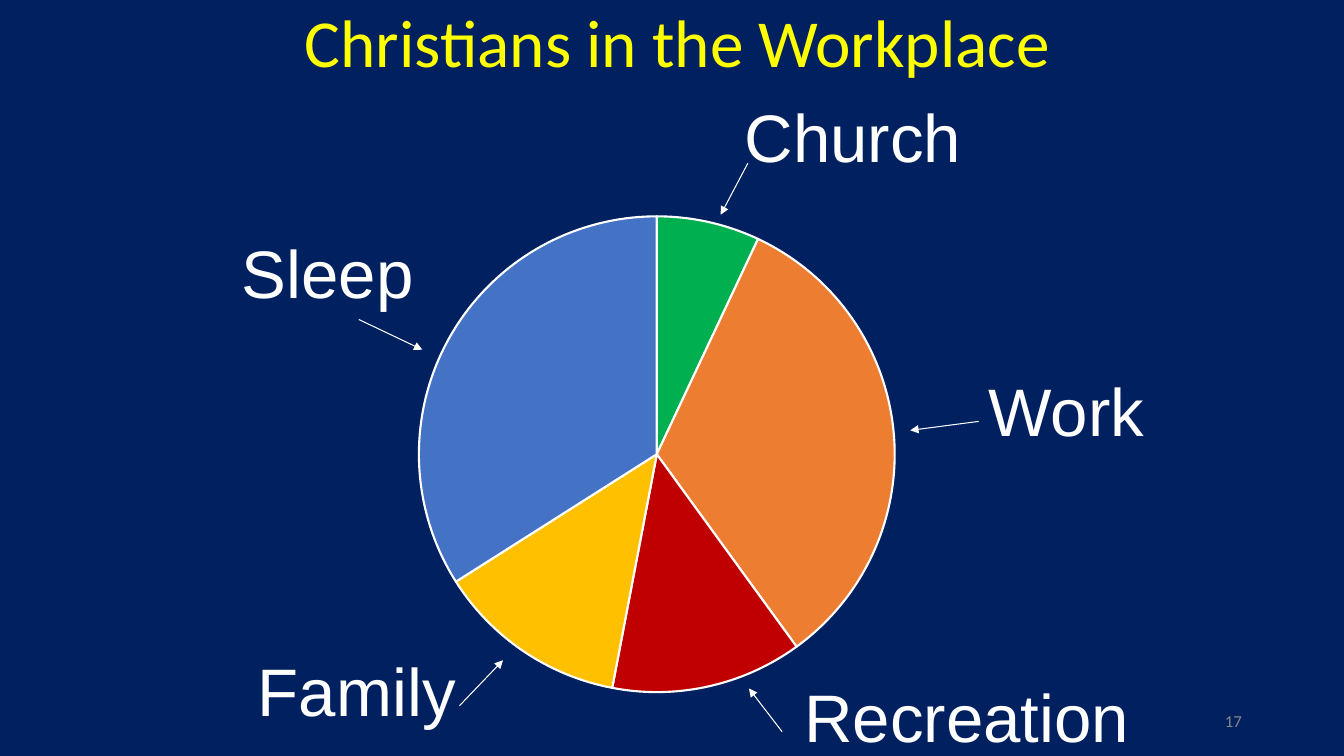
from lxml import etree
from pptx import Presentation
from pptx.chart.data import CategoryChartData
from pptx.dml.color import RGBColor
from pptx.enum.chart import XL_CHART_TYPE
from pptx.enum.shapes import MSO_CONNECTOR
from pptx.enum.text import MSO_ANCHOR, PP_ALIGN
from pptx.oxml.ns import qn
from pptx.util import Pt

PIE = XL_CHART_TYPE.PIE
STRAIGHT = MSO_CONNECTOR.STRAIGHT
TOP, MIDDLE = MSO_ANCHOR.TOP, MSO_ANCHOR.MIDDLE
LEFT, CENTER, RIGHT = PP_ALIGN.LEFT, PP_ALIGN.CENTER, PP_ALIGN.RIGHT

NAVY = RGBColor(0x00, 0x20, 0x60)
YELLOW = RGBColor(0xFF, 0xFF, 0x00)
WHITE = RGBColor(0xFF, 0xFF, 0xFF)
GRAY = RGBColor(0x88, 0x88, 0x88)
GREEN = RGBColor(0x00, 0xB0, 0x50)
ORANGE = RGBColor(0xED, 0x7D, 0x31)
RED = RGBColor(0xC0, 0x00, 0x00)
GOLD = RGBColor(0xFF, 0xC0, 0x00)
BLUE = RGBColor(0x44, 0x72, 0xC4)

SLICES = [(7, GREEN), (33, ORANGE), (13, RED), (13, GOLD), (34, BLUE)]
PLOT_AREA = {"x": 0.238, "y": 0.025, "w": 0.531, "h": 0.939}

# text, left, top, width, arrow start, arrow end
LABELS = [
    ("Work", 699.1, 260.6, 272.2, (699.1, 301), (650.2, 307.4)),
    ("Sleep", 165.6, 162, 272.2, (256.3, 228.2), (301.7, 249.8)),
    ("Family", 177.1, 460.1, 272.2, (328.3, 504), (359.3, 471.6)),
    ("Recreation", 567.4, 478.8, 337.7, (558.7, 522.7), (535, 491.8)),
    ("Church", 524.9, 64.8, 272.2, (534.2, 116.6), (514.8, 153.4)),
]


def add_text(slide, text, box, size, font_name, color, align=LEFT, anchor=TOP):
    shape = slide.shapes.add_textbox(*(Pt(length) for length in box))
    frame = shape.text_frame
    frame.word_wrap = True
    frame.vertical_anchor = anchor
    paragraph = frame.paragraphs[0]
    paragraph.alignment = align
    run = paragraph.add_run()
    run.text = text
    run.font.size = Pt(size)
    run.font.name = font_name
    run.font.color.rgb = color


def add_arrow(slide, start, end):
    points = (Pt(length) for length in start + end)
    connector = slide.shapes.add_connector(STRAIGHT, *points)
    connector.line.color.rgb = WHITE
    connector.line.width = Pt(0.75)
    properties = connector.element.spPr
    line = properties.find(qn("a:ln"))
    etree.SubElement(line, qn("a:tailEnd"), type="triangle")
    etree.SubElement(properties, qn("a:effectLst"))


def place_plot_area(chart):
    """Fix the inner plot area at fractions of the chart frame."""
    plot_area = chart.element.find(".//" + qn("c:plotArea"))
    for old_layout in plot_area.findall(qn("c:layout")):
        plot_area.remove(old_layout)
    layout = etree.Element(qn("c:layout"))
    plot_area.insert(0, layout)
    manual = etree.SubElement(layout, qn("c:manualLayout"))
    settings = [("layoutTarget", "inner"), ("xMode", "edge"), ("yMode", "edge")]
    for name, value in settings + list(PLOT_AREA.items()):
        etree.SubElement(manual, qn("c:" + name), val=str(value))


def add_pie(slide, box):
    data = CategoryChartData()
    data.categories = [str(number) for number in range(1, len(SLICES) + 1)]
    data.add_series("Series 1", [value for value, _ in SLICES])
    frame = slide.shapes.add_chart(PIE, *(Pt(length) for length in box), data)
    chart = frame.chart
    chart.has_title = False
    chart.has_legend = False
    chart.font.name = "Calibri"
    chart.font.size = Pt(10)
    chart.font.color.rgb = WHITE
    plot = chart.plots[0]
    plot.vary_by_categories = True
    for index, (_, color) in enumerate(SLICES):
        slice_format = plot.series[0].points[index].format
        slice_format.fill.solid()
        slice_format.fill.fore_color.rgb = color
        slice_format.line.color.rgb = WHITE
        slice_format.line.width = Pt(1.5)
    place_plot_area(chart)


def main():
    presentation = Presentation()
    presentation.slide_width = Pt(960)
    presentation.slide_height = Pt(540)
    slide = presentation.slides.add_slide(presentation.slide_layouts[6])
    slide.background.fill.solid()
    slide.background.fill.fore_color.rgb = NAVY

    add_text(slide, "Christians in the Workplace", (45.4, -3.6, 877, 254.2),
             48, "Calibri", YELLOW, CENTER)
    add_text(slide, "17", (678.2, 500.4, 216, 28.8),
             12, "Calibri", GRAY, RIGHT, MIDDLE)
    add_pie(slide, (146.9, 145.4, 640.1, 362.2))
    for text, left, top, width, start, end in LABELS:
        add_text(slide, text, (left, top, width, 65.5), 48, "Arial", WHITE)
        add_arrow(slide, start, end)

    presentation.save("out.pptx")


if __name__ == "__main__":
    main()
